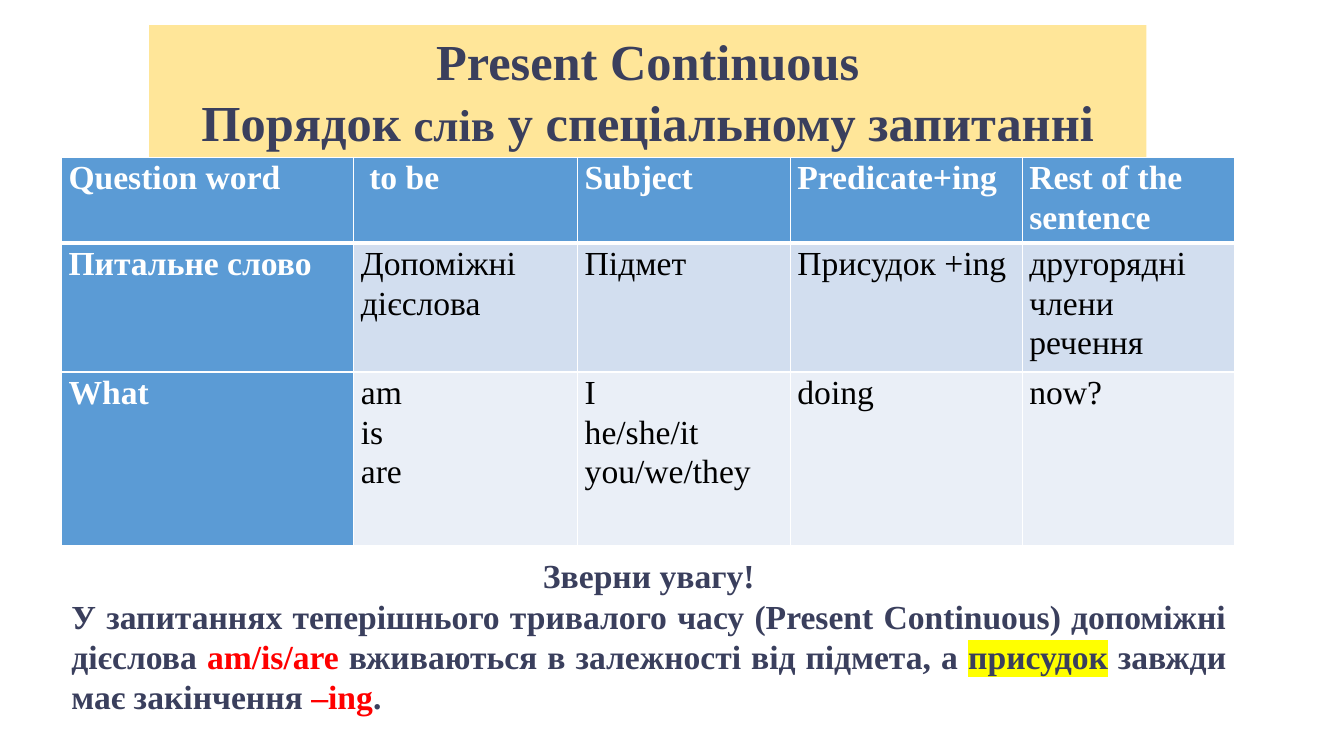
from lxml.etree import SubElement
from pptx import Presentation
from pptx.dml.color import RGBColor
from pptx.enum.shapes import MSO_SHAPE
from pptx.enum.text import MSO_ANCHOR, PP_ALIGN
from pptx.oxml.ns import qn
from pptx.util import Inches, Pt

FONT = "Times New Roman"
COLORS = {
    "ink": "3A3F5D", "banner": "FFE699", "header": "5B9BD5",
    "odd": "D2DEEF", "even": "EAEFF7", "white": "FFFFFF",
    "black": "000000", "red": "FF0000", "marker": "FFFF00",
}

# Each paragraph is an alignment and its (text, size, color, highlight) spans.
TITLE = [
    (PP_ALIGN.CENTER, [("Present Continuous", 36, "ink", None)]),
    (PP_ALIGN.CENTER, [
        ("Порядок ", 36, "ink", None),
        ("слів", 32, "ink", None),
        (" у спеціальному запитанні", 36, "ink", None),
    ]),
]
NOTE = [
    (PP_ALIGN.CENTER, [("Зверни увагу!", 24, "ink", None)]),
    (PP_ALIGN.JUSTIFY, [
        ("У запитаннях теперішнього тривалого часу (Present Continuous) "
         "допоміжні дієслова ", 24, "ink", None),
        ("am/is/are ", 24, "red", None),
        ("вживаються в залежності від підмета, а ", 24, "ink", None),
        ("присудок", 24, "ink", "marker"),
        (" завжди має закінчення ", 24, "ink", None),
        ("–ing", 24, "red", None),
        (".", 24, "ink", None),
    ]),
]
WORD_ORDER = [
    ["Question word", " to be", "Subject", "Predicate+ing", "Rest of the sentence"],
    ["Питальне слово", "Допоміжні дієслова", "Підмет", "Присудок +ing",
     "другорядні члени речення"],
    ["What", "am\nis\nare", "I\nhe/she/it\nyou/we/they", "doing", "now?"],
]
COLUMN_WIDTHS = [2.9, 2.22, 2.11, 2.3, 2.11]
ROW_HEIGHTS = [0.85, 1.28, 1.72]
LEFT, WIDTH = 0.61, 11.65


def rgb(name):
    return RGBColor.from_string(COLORS[name])


def style_span(span, size, color, bold=True):
    span.font.size = Pt(size)
    span.font.bold = bold
    span.font.color.rgb = rgb(color)
    span.font.name = FONT


def highlight(span, color):
    """Put a marker colour behind a span; it must precede the font element."""
    properties = span.font._element
    marker = SubElement(properties, qn("a:highlight"))
    SubElement(marker, qn("a:srgbClr"), val=COLORS[color])
    properties.find(qn("a:latin")).addprevious(marker)


def write_paragraphs(frame, paragraphs):
    frame.word_wrap = True
    frame.vertical_anchor = MSO_ANCHOR.TOP
    for index, (alignment, spans) in enumerate(paragraphs):
        para = frame.paragraphs[0] if index == 0 else frame.add_paragraph()
        para.alignment = alignment
        for text, size, color, marker in spans:
            span = para.add_run()
            span.text = text
            style_span(span, size, color)
            if marker:
                highlight(span, marker)


def add_borders(cell, top, bottom):
    """Draw white cell edges; top and bottom are widths in points."""
    properties = cell._tc.get_or_add_tcPr()
    for side, width in (("L", 1), ("R", 1), ("T", top), ("B", bottom)):
        edge = SubElement(properties, qn(f"a:ln{side}"), w=str(Pt(width)))
        fill = SubElement(edge, qn("a:solidFill"))
        SubElement(fill, qn("a:srgbClr"), val=COLORS["white"])


def add_banner(page):
    banner = page.shapes.add_shape(
        MSO_SHAPE.RECTANGLE, Inches(1.48), Inches(0.25), Inches(9.89), Inches(1.31))
    banner.shadow.inherit = False
    banner.fill.solid()
    banner.fill.fore_color.rgb = rgb("banner")
    banner.line.fill.background()
    write_paragraphs(banner.text_frame, TITLE)


def fill_cell(cell, text, row, column):
    is_heading = row == 0 or column == 0
    add_borders(cell, top=3 if row == 1 else 1, bottom=3 if row == 0 else 1)
    cell.fill.solid()
    cell.fill.fore_color.rgb = rgb(
        "header" if is_heading else "odd" if row % 2 else "even")
    cell.margin_left = cell.margin_right = Inches(0.07)
    cell.margin_top = cell.margin_bottom = 0
    cell.text_frame.text = text
    for para in cell.text_frame.paragraphs:
        para.line_spacing = 1.07
        for span in para.runs:
            style_span(span, 24, "white" if is_heading else "black", is_heading)


def add_word_order(page):
    table = page.shapes.add_table(
        len(ROW_HEIGHTS), len(COLUMN_WIDTHS), Inches(LEFT), Inches(1.56),
        Inches(WIDTH), Inches(sum(ROW_HEIGHTS))).table
    for column, width in zip(table.columns, COLUMN_WIDTHS):
        column.width = Inches(width)
    for row, height in zip(table.rows, ROW_HEIGHTS):
        row.height = Inches(height)
    for row, texts in enumerate(WORD_ORDER):
        for column, text in enumerate(texts):
            fill_cell(table.cell(row, column), text, row, column)


def main():
    deck = Presentation()
    deck.slide_width, deck.slide_height = Inches(13.33), Inches(7.5)
    page = deck.slides.add_slide(deck.slide_layouts[6])
    add_banner(page)
    add_word_order(page)
    note = page.shapes.add_textbox(
        Inches(LEFT), Inches(5.46), Inches(WIDTH), Inches(2.04))
    write_paragraphs(note.text_frame, NOTE)
    deck.save("out.pptx")


if __name__ == "__main__":
    main()
